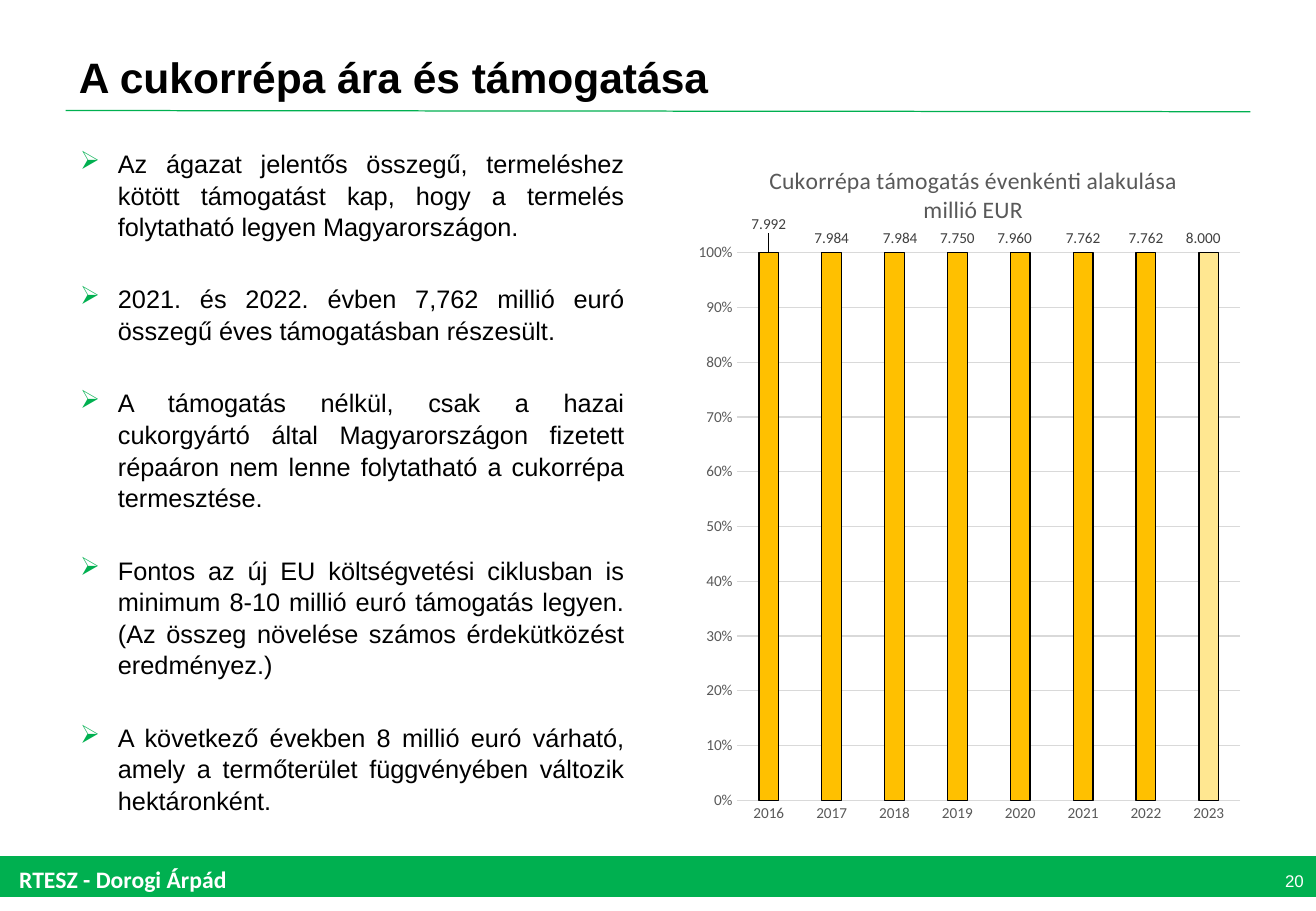
from lxml.etree import SubElement as Sub
from pptx import Presentation
from pptx.chart.data import CategoryChartData as Data
from pptx.dml.color import RGBColor as RGB
from pptx.enum.chart import XL_CHART_TYPE as Kind, XL_LABEL_POSITION as Spot
from pptx.enum.chart import XL_TICK_MARK as Tick
from pptx.enum.shapes import MSO_CONNECTOR as Conn, MSO_SHAPE as Form
from pptx.enum.text import MSO_ANCHOR as Anchor, PP_ALIGN as Align
from pptx.oxml import parse_xml
from pptx.oxml.ns import nsdecls, qn
from pptx.util import Inches, Pt

COLORS = {"green": "00B050", "white": "FFFFFF", "black": "000000", "gold": "FFC000",
          "pale": "FFE791", "grey": "595959", "dark": "404040", "grid": "D9D9D9"}
HUES = {name: RGB.from_string(code) for name, code in COLORS.items()}


def style(font, hue, **form):
    for name, value in form.items():
        setattr(font, name, value)
    font.color.rgb = HUES[hue]


def layout(**spots):
    parts = "".join(f'<c:{tag} val="{value}"/>' for tag, value in spots.items())
    return parse_xml(f'<c:layout {nsdecls("c")}><c:manualLayout>{parts}'
                     '</c:manualLayout></c:layout>')


deck = Presentation()
deck.slide_width, deck.slide_height = Inches(10.83), Inches(7.5)
slide = deck.slides.add_slide(deck.slide_layouts[6])
shapes = slide.shapes

rule = shapes.add_connector(Conn.STRAIGHT, Inches(0.54), Inches(0.91),
                            Inches(10.29), Inches(0.92))
rule.line.color.rgb = HUES["green"]
rule.line.width = Pt(0.75)
Sub(rule.element.spPr, qn("a:effectLst"))

band = shapes.add_shape(Form.RECTANGLE, Inches(0), Inches(7.06), Inches(10.83), Inches(0.31))
band.shadow.inherit = False
band.fill.solid()
band.fill.fore_color.rgb = band.line.color.rgb = HUES["green"]
band.line.width = Pt(2)

points = [
    "Az ágazat jelentős összegű, termeléshez kötött támogatást kap, hogy a termelés "
    "folytatható legyen Magyarországon.",
    "2021. és 2022. évben 7,762 millió euró összegű éves támogatásban részesült.",
    "A támogatás nélkül, csak a hazai cukorgyártó által Magyarországon fizetett répaáron "
    "nem lenne folytatható a cukorrépa termesztése.",
    "Fontos az új EU költségvetési ciklusban is minimum 8-10 millió euró támogatás legyen. "
    "(Az összeg növelése számos érdekütközést eredményez.)",
    "A következő években 8 millió euró várható, amely a termőterület függvényében "
    "változik hektáronként.",
]
texts = [
    ((0.06, 7.06, 2.2, 0.34), ["RTESZ - Dorogi Árpád"], Align.LEFT, Anchor.TOP, "white",
     {"size": Pt(14), "name": "Calibri", "bold": True}),
    ((0.53, 0.36, 8.27, 0.54), ["A cukorrépa ára és támogatása"], Align.LEFT, Anchor.TOP, "black",
     {"size": Pt(25.2), "name": "Arial", "bold": True}),
    ((0.54, 1.15, 4.72, 5.75), points, Align.JUSTIFY, Anchor.TOP, "black",
     {"size": Pt(15), "name": "Arial"}),
    ((10.41, 7.05, 0.44, 0.4), ["20"], Align.RIGHT, Anchor.MIDDLE, "white",
     {"size": Pt(10), "name": "Arial"}),
]
for place, lines, align, anchor, hue, form in texts:
    frame = shapes.add_textbox(*map(Inches, place)).text_frame
    frame.word_wrap = True
    frame.vertical_anchor = anchor
    frame.margin_left = frame.margin_right = Inches(0.1 if place[0] < 0.1 else 0.12)
    frame.margin_top = frame.margin_bottom = Inches(0.06)
    for rank, line in enumerate(lines):
        para = frame.add_paragraph() if rank else frame.paragraphs[0]
        para.alignment = align
        if rank:
            para.space_before = Pt(24.2)
        if lines is points:
            para.line_spacing = 1.04
            props = para._p.get_or_add_pPr()
            props.set("marL", str(Inches(0.31)))
            props.set("indent", str(-Inches(0.31)))
            tint = Sub(props, qn("a:buClr"))
            Sub(tint, qn("a:srgbClr"), val=COLORS["green"])
            Sub(props, qn("a:buChar"), char="➢")
        run = para.add_run()
        run.text = line
        style(run.font, hue, **form)

data = Data(number_format="0.000")
data.categories = [str(year) for year in range(2016, 2024)]
data.add_series("Támogatás", [7.992, 7.984, 7.984, 7.75, 7.96, 7.762, 7.762, 8])
chart = shapes.add_chart(Kind.COLUMN_STACKED_100, Inches(5.65), Inches(1.15),
                         Inches(4.65), Inches(5.75), data).chart
style(chart.font, "black", size=Pt(10), name="Calibri")
chart.has_legend = False
chart.has_title = True
head = chart.chart_title.text_frame
head.text = "Cukorrépa támogatás évenkénti alakulása\nmillió EUR"
for para in head.paragraphs:
    para.alignment = Align.CENTER
    for run in para.runs:
        style(run.font, "grey", size=Pt(14), name="Calibri", bold=False)
title = chart.chart_title.element
for old in title.findall(qn("c:layout")):
    title.remove(old)
title.find(qn("c:tx")).addnext(layout(xMode="edge", yMode="edge", x=0.14, y=0.03))

area = chart.element.find(".//" + qn("c:plotArea"))
for old in area.findall(qn("c:layout")):
    area.remove(old)
area.insert(0, layout(layoutTarget="inner", xMode="edge", yMode="edge",
                      x=0.09, y=0.162, w=0.89, h=0.784))

for axis in (chart.category_axis, chart.value_axis):
    axis.major_tick_mark = axis.minor_tick_mark = Tick.NONE
    style(axis.tick_labels.font, "grey", size=Pt(9), name="Calibri")
years, scale = chart.category_axis, chart.value_axis
scale.format.line.fill.background()
scale.minimum_scale, scale.maximum_scale, scale.major_unit = 0, 1, 0.1
scale.tick_labels.number_format = "0%"
scale.tick_labels.number_format_is_linked = False
scale.has_major_gridlines = True
for line in (years.format.line, scale.major_gridlines.format.line):
    line.color.rgb = HUES["grid"]
    line.width = Pt(0.75)

plot = chart.plots[0]
plot.gap_width, plot.overlap, plot.vary_by_categories = 219, 100, False
bars = plot.series[0]
last = bars.points[7]
for item, hue in ((bars, "gold"), (last, "pale")):
    item.format.fill.solid()
    item.format.fill.fore_color.rgb = HUES[hue]
    item.format.line.color.rgb = HUES["black"]
    item.format.line.width = Pt(0.75)

labels = bars.data_labels
labels.show_value = True
labels.position = Spot.INSIDE_END
labels.number_format = "0.000"
labels.number_format_is_linked = False
style(labels.font, "dark", size=Pt(9), name="Calibri")
shifts = [(0, -0.06), (0, -0.04), (0.01, -0.04), (0, -0.04),
          (-0.01, -0.04), (0, -0.04), (0, -0.04), (-0.01, -0.04)]
for rank, (across, down) in enumerate(shifts):
    label = bars.points[rank].data_label
    style(label.font, "dark", size=Pt(9), name="Calibri")
    label.position = Spot.INSIDE_END
    node = chart.element.findall(".//" + qn("c:dLbl"))[rank]
    node.find(qn("c:idx")).addnext(layout(x=across, y=down))

deck.save("out.pptx")
